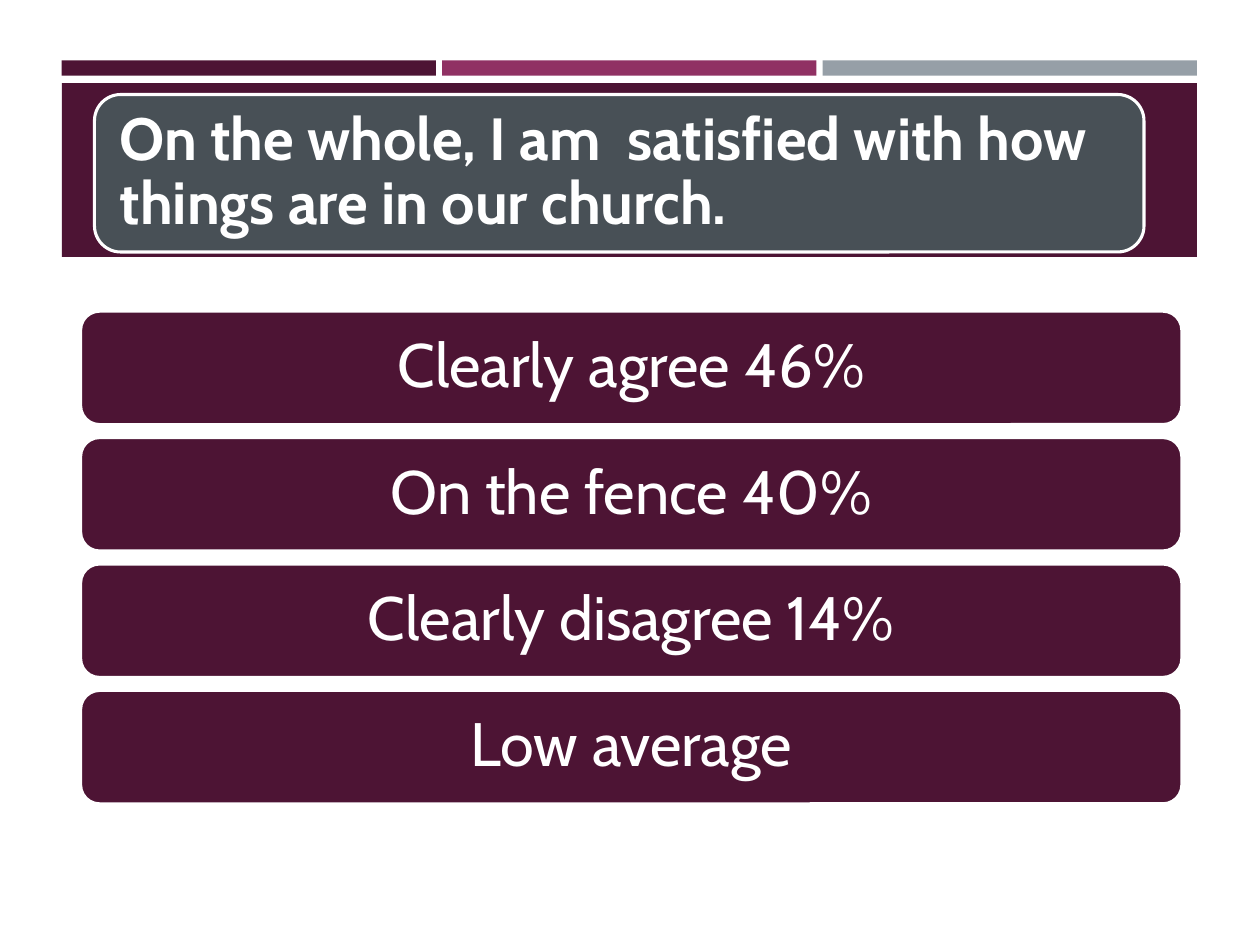
from dataclasses import dataclass

from pptx import Presentation
from pptx.dml.color import RGBColor
from pptx.enum.shapes import MSO_SHAPE
from pptx.enum.text import MSO_ANCHOR, MSO_AUTO_SIZE, PP_ALIGN
from pptx.util import Inches, Pt


@dataclass(frozen=True)
class Theme:
    plum: RGBColor = RGBColor(0x4D, 0x14, 0x34)
    magenta: RGBColor = RGBColor(0x90, 0x31, 0x63)
    silver: RGBColor = RGBColor(0x96, 0x9F, 0xA7)
    slate: RGBColor = RGBColor(0x48, 0x50, 0x56)
    white: RGBColor = RGBColor(0xFF, 0xFF, 0xFF)
    font: str = "Cabin"
    title_size: int = 34
    answer_size: int = 35
    outline: float = 1.75


class SlideBuilder:
    def __init__(self, page, theme):
        self.page = page
        self.theme = theme

    def block(self, kind, left, top, width, height, color, outlined=False):
        box = self.page.shapes.add_shape(
            kind, Inches(left), Inches(top), Inches(width), Inches(height))
        box.shadow.inherit = False
        box.fill.solid()
        box.fill.fore_color.rgb = color
        if outlined:
            box.line.color.rgb = self.theme.white
            box.line.width = Pt(self.theme.outline)
        else:
            box.line.fill.background()
        return box

    def set_text(self, box, text, size, align, inset, bold=False):
        frame = box.text_frame
        frame.text = text
        frame.word_wrap = True
        frame.auto_size = MSO_AUTO_SIZE.NONE
        frame.vertical_anchor = MSO_ANCHOR.MIDDLE
        frame.margin_left = frame.margin_right = Inches(inset)
        frame.margin_top = frame.margin_bottom = Inches(inset)
        para = frame.paragraphs[0]
        para.alignment = align
        para.line_spacing = 0.9
        para.font.name = self.theme.font
        para.font.size = Pt(size)
        para.font.bold = bold
        para.font.color.rgb = self.theme.white

    def title(self, text, left, top, width, height):
        box = self.page.shapes.title
        box.left, box.top = Inches(left), Inches(top)
        box.width, box.height = Inches(width), Inches(height)
        self.set_text(box, text, self.theme.title_size, PP_ALIGN.LEFT, 0.14, bold=True)
        # Bring the title in front of its panel
        self.page.shapes.element.append(box.element)

    def answer(self, text, left, top, width, height):
        box = self.block(MSO_SHAPE.ROUNDED_RECTANGLE, left, top, width, height,
                         self.theme.plum, outlined=True)
        self.set_text(box, text, self.theme.answer_size, PP_ALIGN.CENTER, 0.15)


def main():
    deck = Presentation()
    deck.slide_width, deck.slide_height = Inches(10), Inches(7.5)
    page = deck.slides.add_slide(deck.slide_layouts.get_by_name("Title Only"))
    theme = Theme()
    builder = SlideBuilder(page, theme)

    # Three stripes above the header band
    for index, color in enumerate((theme.plum, theme.magenta, theme.silver)):
        builder.block(MSO_SHAPE.RECTANGLE, 0.49 + index * 3.02, 0.48, 2.97, 0.12, color)
    builder.block(MSO_SHAPE.RECTANGLE, 0.49, 0.66, 9.01, 1.38, theme.plum)

    # Statement on its panel
    builder.block(MSO_SHAPE.ROUNDED_RECTANGLE, 0.75, 0.75, 8.33, 1.25,
                  theme.slate, outlined=True)
    builder.title("On the whole, I am  satisfied with how things are in our church.",
                  0.81, 0.81, 8.21, 1.13)

    # Survey answers
    answers = ("Clearly agree 46%", "On the fence 40%",
               "Clearly disagree 14%", "Low average")
    first_top, last_top = 2.47, 5.48
    pitch = (last_top - first_top) / (len(answers) - 1)
    for index, text in enumerate(answers):
        builder.answer(text, 0.64, first_top + index * pitch, 8.74, 0.9)

    deck.save("out.pptx")


if __name__ == "__main__":
    main()
